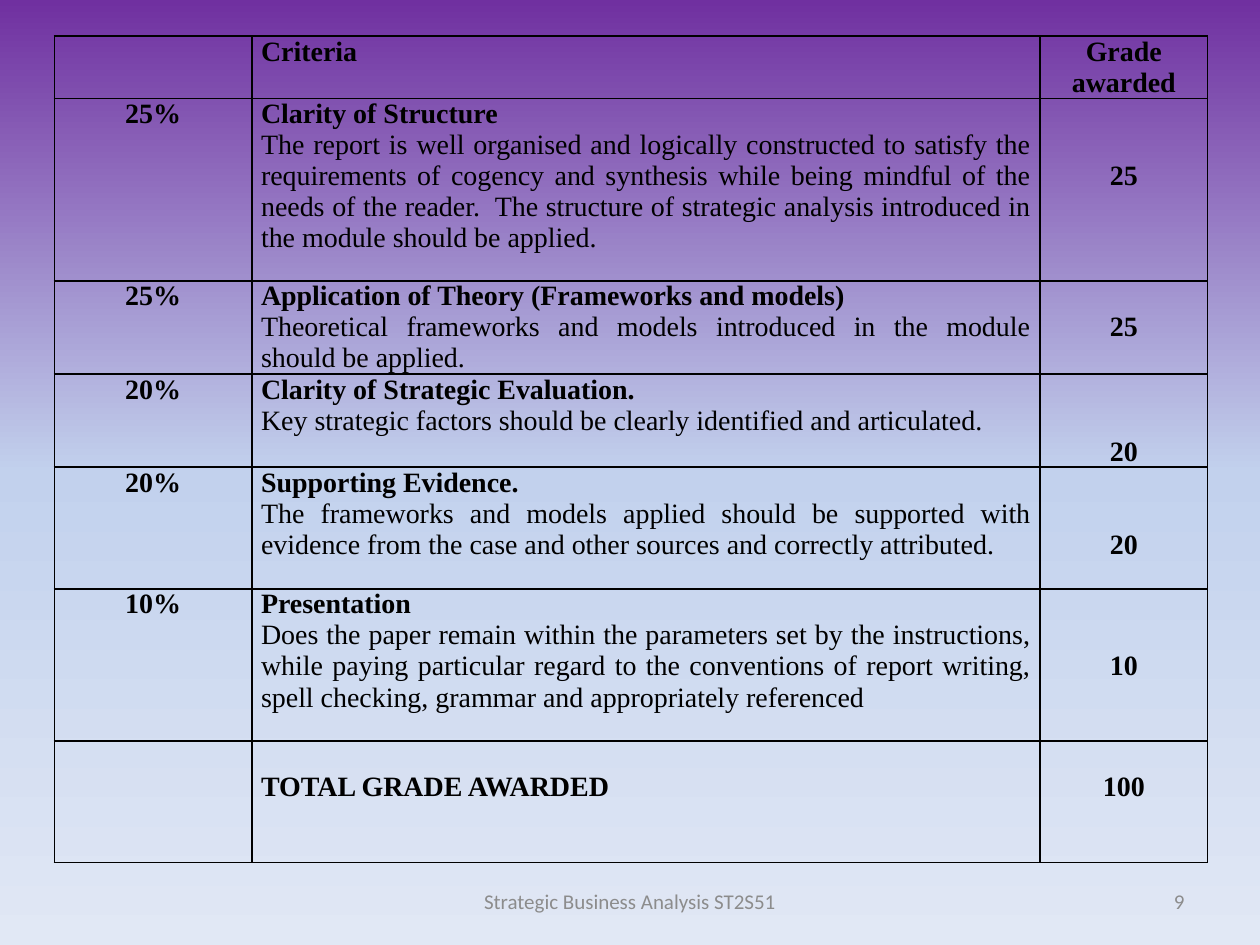
from copy import deepcopy

from lxml import etree
from pptx import Presentation
from pptx.dml.color import RGBColor
from pptx.enum.text import MSO_ANCHOR, PP_ALIGN
from pptx.oxml.ns import qn
from pptx.util import Pt

LEFT, CENTER, RIGHT, JUSTIFY = PP_ALIGN.LEFT, PP_ALIGN.CENTER, PP_ALIGN.RIGHT, PP_ALIGN.JUSTIFY
MIDDLE = MSO_ANCHOR.MIDDLE

COLORS = {
    "text": "000000",
    "footer": "8C8C8C",
    "top": "7030A0",
    "middle": "C2D1ED",
    "bottom": "E1E8F5",
}
HEADING = {"size": Pt(16), "name": "Times New Roman", "bold": True}
BODY = {**HEADING, "bold": False}
FOOTER = {"size": Pt(12), "name": "Calibri"}

LINE_HEIGHT = 17.7
COLUMN_WIDTHS = [113, 450.3, 95.8]
ROW_HEIGHTS = [35, 104.2, 53, 53, 69.5, 87, 69.5]

CRITERIA = [
    ("25%", "Clarity of Structure",
     "The report is well organised and logically constructed to satisfy the requirements of "
     "cogency and synthesis while being mindful of the needs of the reader.  The structure of "
     "strategic analysis introduced in the module should be applied.", "25", 2),
    ("25%", "Application of Theory (Frameworks and models)",
     "Theoretical frameworks and models introduced in the module should be applied.", "25", 1),
    ("20%", "Clarity of Strategic Evaluation.",
     "Key strategic factors should be clearly identified and articulated.", "20", 2),
    ("20%", "Supporting Evidence.",
     "The frameworks and models applied should be supported with evidence from the case and "
     "other sources and correctly attributed.", "20", 2),
    ("10%", "Presentation",
     "Does the paper remain within the parameters set by the instructions, while paying "
     "particular regard to the conventions of report writing, spell checking, grammar and "
     "appropriately referenced", "10", 2),
]


def set_background(slide):
    fill = slide.background.fill
    fill.gradient()
    fill.gradient_angle = 270
    stop_list = next(slide.element.iter(qn("a:gsLst")))
    stop_list.append(deepcopy(stop_list[0]))
    stops = zip(fill.gradient_stops, (0, 0.5, 1), ("top", "middle", "bottom"))
    for stop, position, color in stops:
        stop.position = position
        stop.color.rgb = RGBColor.from_string(COLORS[color])


def write_paragraph(paragraph, text, alignment, font_format, color):
    paragraph.alignment = alignment
    run = paragraph.add_run()
    run.text = text
    for name, value in font_format.items():
        setattr(run.font, name, value)
    run.font.color.rgb = RGBColor.from_string(COLORS[color])


def add_borders(cell):
    properties = cell._tc.get_or_add_tcPr()
    for index, side in enumerate(("a:lnL", "a:lnR", "a:lnT", "a:lnB")):
        line = etree.Element(qn(side), w=str(Pt(1)))
        fill = etree.SubElement(line, qn("a:solidFill"))
        etree.SubElement(fill, qn("a:srgbClr"), val=COLORS["text"])
        properties.insert(index, line)


def write_cell(cell, texts, alignment, lines_above=0):
    cell.margin_top = Pt(lines_above * LINE_HEIGHT)
    frame = cell.text_frame
    for index, text in enumerate(texts):
        paragraph = frame.add_paragraph() if index else frame.paragraphs[0]
        write_paragraph(paragraph, text, alignment, BODY if index else HEADING, "text")


def add_grade_table(slide):
    shape = slide.shapes.add_table(
        len(ROW_HEIGHTS), len(COLUMN_WIDTHS), Pt(31), Pt(20.7),
        Pt(sum(COLUMN_WIDTHS)), Pt(sum(ROW_HEIGHTS)))
    table = shape.table
    table.first_row = table.horz_banding = False
    for column, width in zip(table.columns, COLUMN_WIDTHS):
        column.width = Pt(width)
    for row, height in zip(table.rows, ROW_HEIGHTS):
        row.height = Pt(height)
    for cell in table.iter_cells():
        cell.margin_left = cell.margin_right = Pt(5.2)
        cell.margin_top = cell.margin_bottom = 0
        cell.fill.background()
        add_borders(cell)
    return table


def fill_grade_table(table):
    write_cell(table.cell(0, 1), ["Criteria"], LEFT)
    write_cell(table.cell(0, 2), ["Grade awarded"], CENTER)
    for row, (weight, title, description, grade, lines_above) in enumerate(CRITERIA, 1):
        write_cell(table.cell(row, 0), [weight], CENTER)
        write_cell(table.cell(row, 1), [title, description], JUSTIFY)
        write_cell(table.cell(row, 2), [grade], CENTER, lines_above)
    total_row = len(CRITERIA) + 1
    write_cell(table.cell(total_row, 1), ["TOTAL GRADE AWARDED"], LEFT, 1)
    write_cell(table.cell(total_row, 2), ["100"], CENTER, 1)


def add_footer_text(slide, text, left, width, alignment):
    frame = slide.shapes.add_textbox(Pt(left), Pt(500.5), Pt(width), Pt(28.8)).text_frame
    frame.word_wrap = True
    frame.vertical_anchor = MIDDLE
    write_paragraph(frame.paragraphs[0], text, alignment, FOOTER, "footer")


def main():
    presentation = Presentation()
    presentation.slide_width, presentation.slide_height = Pt(720), Pt(540)
    slide = presentation.slides.add_slide(presentation.slide_layouts[6])
    set_background(slide)
    fill_grade_table(add_grade_table(slide))
    add_footer_text(slide, "Strategic Business Analysis ST2S51", 246, 228, CENTER)
    add_footer_text(slide, "9", 516, 168, RIGHT)
    presentation.save("out.pptx")


if __name__ == "__main__":
    main()
